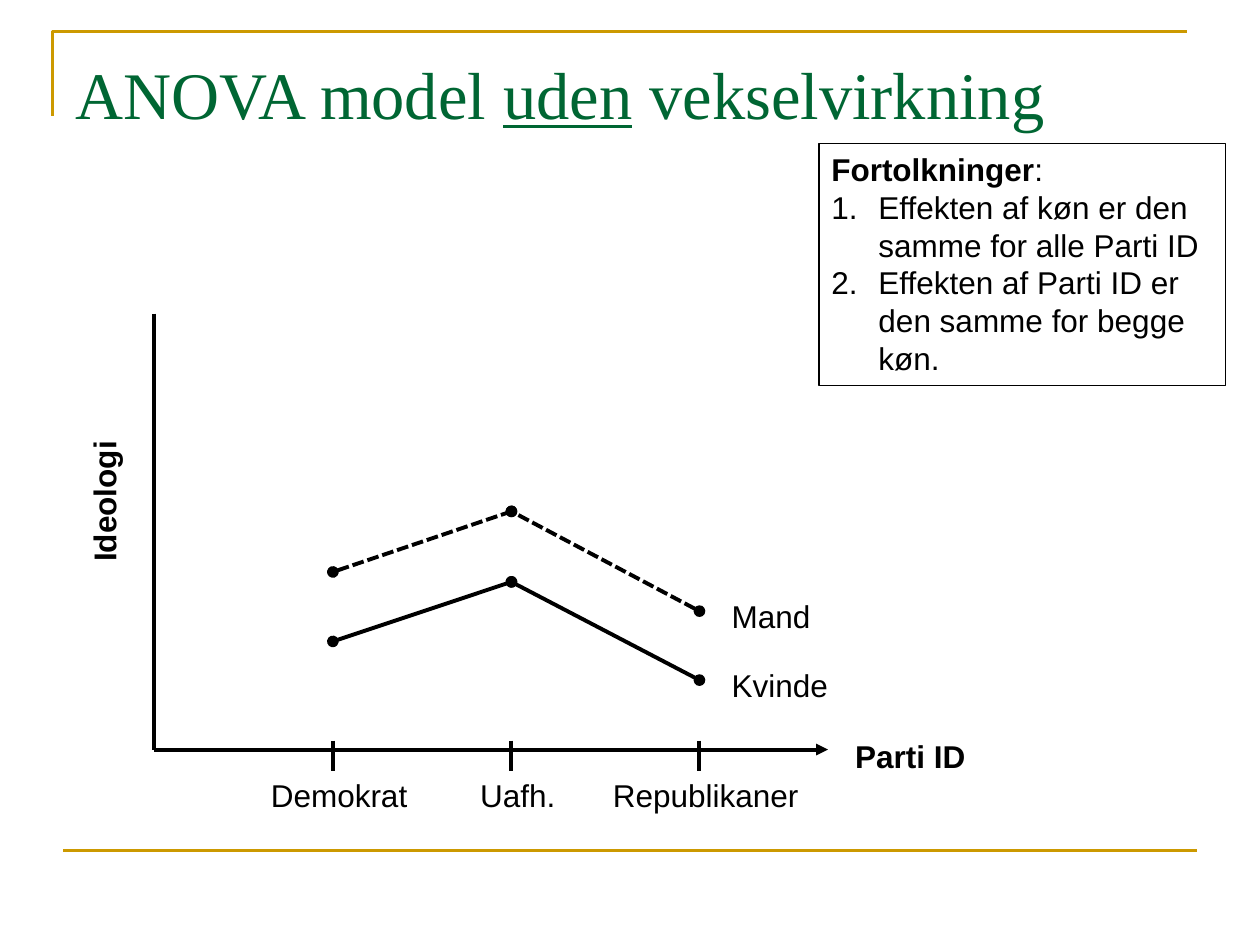
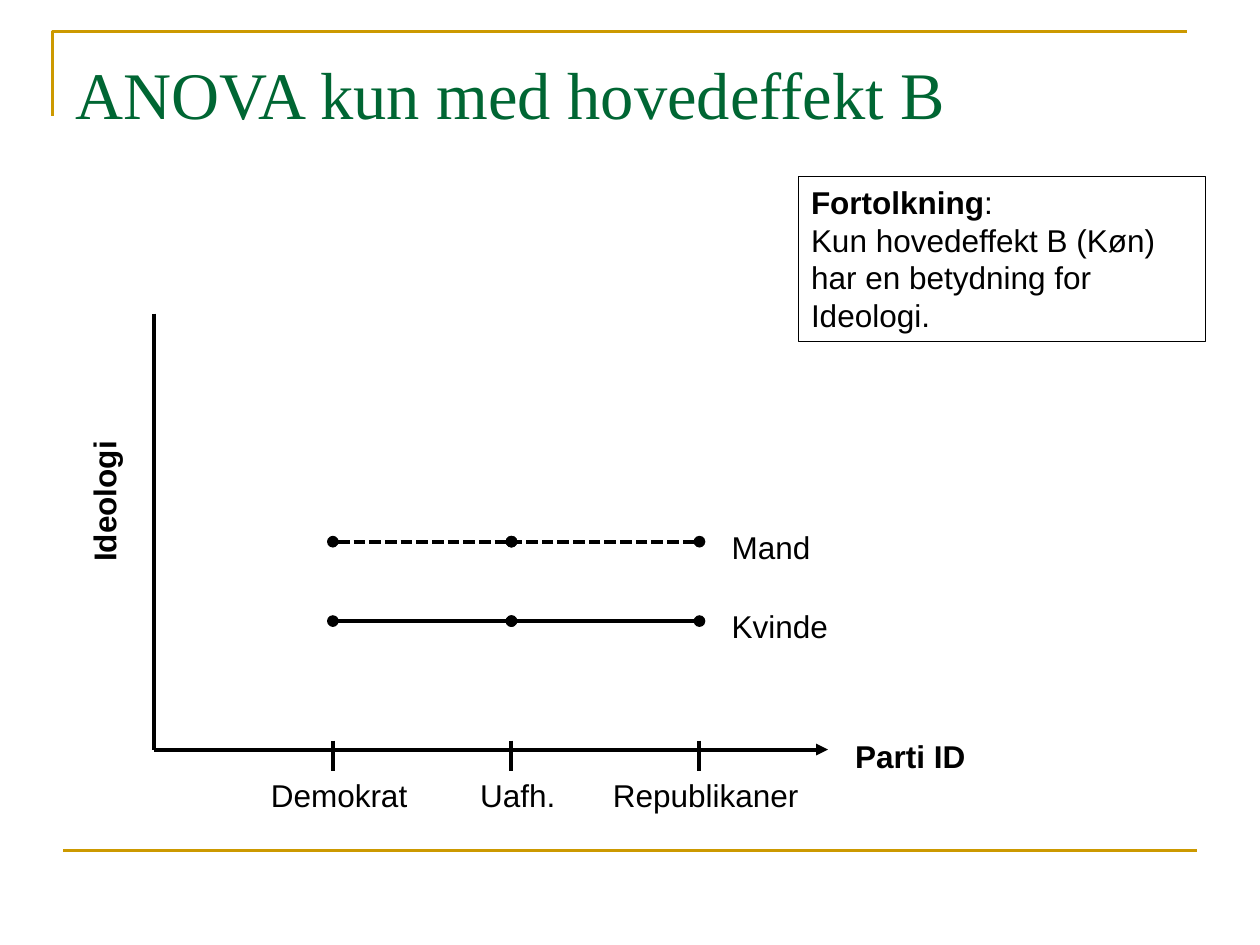
from lxml import etree
from pptx import Presentation
from pptx import util as u
from pptx.dml.color import RGBColor
from pptx.enum import dml, shapes, text
from pptx.oxml.ns import qn

GOLD = RGBColor(0xCC, 0x99, 0x00)
GREEN = RGBColor(0x00, 0x66, 0x33)
BLACK = RGBColor(0, 0, 0)
WHITE = RGBColor(0xFF, 0xFF, 0xFF)
SANS, SERIF = "Arial", "Times New Roman"
ROW = 1.02  # height of a one-line label, in cm

PLOT = (3.1, 6.32, 13.59, 8.79)
TICKS = (3.61, 7.21, 11)  # from the left of the plot
PARTIES = (("Demokrat", 3.3), ("Uafh.", 2.06), ("Republikaner", 4.29))


def add_run(para, words, size=18, font=SANS, color=BLACK, bold=False, under=False):
    run = para.add_run()
    run.text = words
    run.font.size = u.Pt(size)
    run.font.name = font
    run.font.color.rgb = color
    run.font.bold = bold
    run.font.underline = under


def add_box(slide, x, y, w, h, wrap=True):
    box = slide.shapes.add_textbox(u.Cm(x), u.Cm(y), u.Cm(w), u.Cm(h))
    box.text_frame.word_wrap = wrap
    return box


def add_label(slide, words, x, y, w, bold=False, fill=True):
    box = add_box(slide, x, y, w, ROW, wrap=False)
    box.text_frame.auto_size = text.MSO_AUTO_SIZE.SHAPE_TO_FIT_TEXT
    if fill:
        box.fill.solid()
        box.fill.fore_color.rgb = WHITE
    add_run(box.text_frame.paragraphs[0], words, bold=bold)
    return box


def add_line(slide, start, end, color=BLACK, width=2.25, dash=False, head=None, tail=None):
    line = slide.shapes.add_connector(
        shapes.MSO_CONNECTOR.STRAIGHT, *(u.Cm(v) for v in (*start, *end)))
    line.line.color.rgb = color
    line.line.width = u.Pt(width)
    if dash:
        line.line.dash_style = dml.MSO_LINE.SQUARE_DOT
        line.line._get_or_add_ln().find(qn("a:prstDash")).set("val", "sysDash")
    for tag, kind in (("a:headEnd", head), ("a:tailEnd", tail)):
        if kind:
            etree.SubElement(line.line._get_or_add_ln(), qn(tag), type=kind)
    etree.SubElement(line._element.spPr, qn("a:effectLst"))


def add_frame(slide):
    """Gold corner above the title and gold rule at the foot."""
    left, top, right, low = (u.Cm(v) for v in (1.06, 0.64, 23.93, 2.33))
    pen = slide.shapes.build_freeform(left, low)
    pen.add_line_segments([(left, top), (right, top)], close=False)
    corner = pen.convert_to_shape()
    corner.shadow.inherit = False
    corner.fill.background()
    corner.line.color.rgb = GOLD
    corner.line.width = u.Pt(1.5)
    add_line(slide, (1.27, 17.15), (24.13, 17.15), GOLD, 1.5)


def add_title(slide, parts):
    """Parts are pairs of words and whether they are underlined."""
    para = add_box(slide, 1.27, 0.94, 22.86, 3).text_frame.paragraphs[0]
    for words, under in parts:
        add_run(para, words, 38, SERIF, GREEN, under=under)


def add_axes(slide, box):
    x, y, w, h = box
    base = y + h
    add_line(slide, (x, y), (x, base))
    add_line(slide, (x, base), (x + w, base), tail="triangle")
    for tick, (party, wide) in zip(TICKS, PARTIES):
        mid = x + tick
        add_line(slide, (mid, base - 0.18), (mid, base + 0.43))
        add_label(slide, party, mid + 0.15 - wide / 2, base + 0.41, wide, fill=False)
    add_label(slide, "Parti ID", x + w + 0.3, base - 0.38, 2.77, bold=True)
    name = add_label(slide, "Ideologi", x - 2.49, y + 3.26, 2.97, bold=True)
    name.rotation = 270


def add_series(slide, box, name, wide, levels, dash=False):
    """Levels are heights above the horizontal axis, one for each tick."""
    x, y, w, h = box
    dots = [(x + tick, y + h - level) for tick, level in zip(TICKS, levels)]
    right, low = dots[-1]
    add_label(slide, name, right + 0.4, low + 0.1 - ROW / 2, wide)
    for end in (dots[0], dots[-1]):
        add_line(slide, end, dots[1], dash=dash, head="oval", tail="oval")


def add_note(slide, box, head, lines, number=False):
    note = add_box(slide, *box)
    note.line.color.rgb = BLACK
    note.line.width = u.Pt(0.75)
    frame = note.text_frame
    add_run(frame.paragraphs[0], head, bold=True)
    add_run(frame.paragraphs[0], ":")
    for words in lines:
        para = frame.add_paragraph()
        add_run(para, words)
        if number:
            props = para._p.get_or_add_pPr()
            props.set("marL", str(u.Cm(0.95)))
            props.set("indent", str(-u.Cm(0.95)))
            etree.SubElement(props, qn("a:buFont"), typeface=SANS)
            etree.SubElement(props, qn("a:buAutoNum"), type="arabicPeriod")


def add_page(deck, title, men, women, note):
    slide = deck.slides.add_slide(deck.slide_layouts[6])
    add_frame(slide)
    add_title(slide, title)
    add_axes(slide, PLOT)
    add_series(slide, PLOT, "Kvinde", 2.46, women)
    add_series(slide, PLOT, "Mand", 2.11, men, dash=True)
    add_note(slide, *note)


def main():
    deck = Presentation()
    deck.slide_width, deck.slide_height = u.Cm(25.4), u.Cm(19.05)
    add_page(
        deck,
        [("ANOVA model ", False), ("uden", True), (" vekselvirkning", False)],
        men=(3.58, 4.8, 2.79),
        women=(2.18, 3.38, 1.4),
        note=((16.51, 2.9, 8.2, 4.88), "Fortolkninger",
              ["Effekten af køn er den samme for alle Parti ID",
               "Effekten af Parti ID er den samme for begge køn."], True))
    add_page(
        deck,
        [("ANOVA kun med hovedeffekt B", False)],
        men=(4.19,) * 3,
        women=(2.59,) * 3,
        note=((16.1, 3.56, 8.2, 3.33), "Fortolkning",
              ["Kun hovedeffekt B (Køn) har en betydning for Ideologi."]))
    deck.save("out.pptx")


if __name__ == "__main__":
    main()
